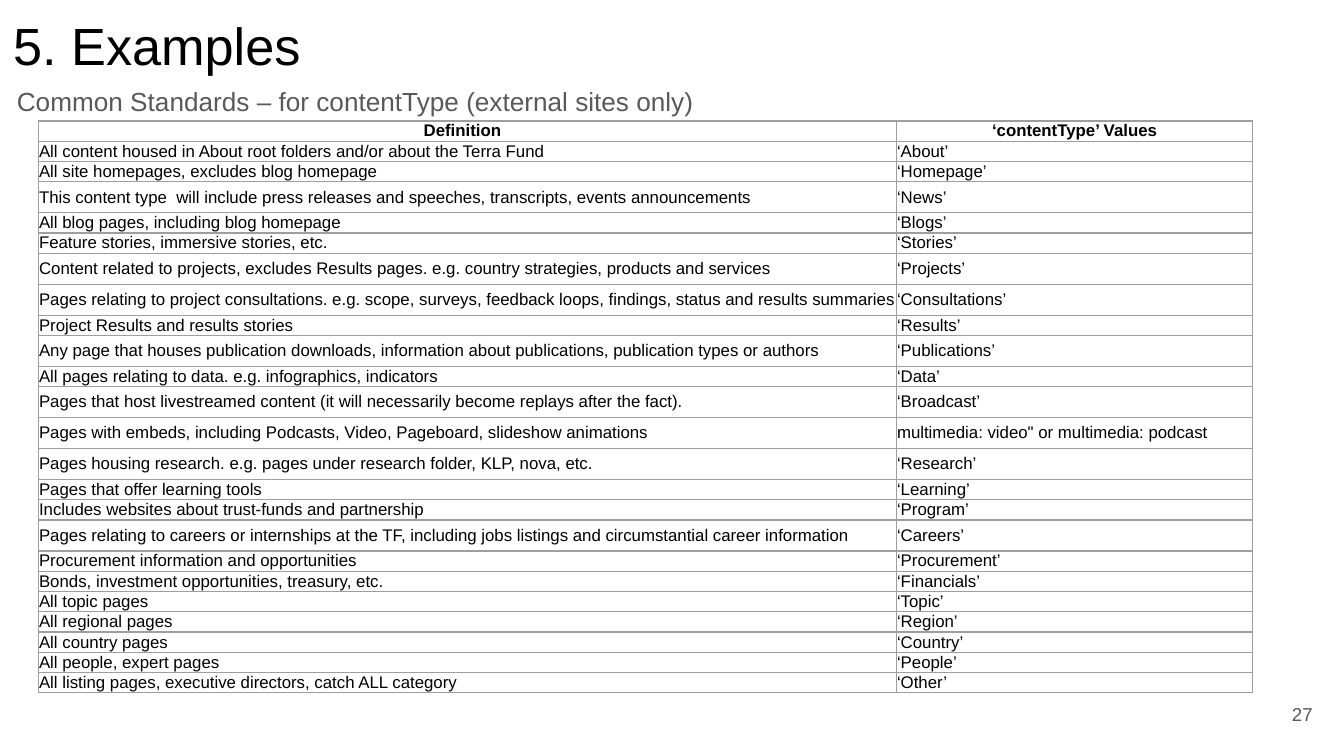
import pptx
import pptx.dml.color
import pptx.enum.text
import pptx.oxml
import pptx.oxml.ns
import pptx.util

PP_ALIGN = pptx.enum.text.PP_ALIGN
ANCHOR = pptx.enum.text.MSO_ANCHOR
COLORS = {"ink": "000000", "muted": "595959", "rule": "9E9E9E"}

# Definition, value, whether the row is tall
ROWS = [
    ("Definition", "‘contentType’ Values", False),
    ("All content housed in About root folders and/or about the Terra Fund", "‘About’", False),
    ("All site homepages, excludes blog homepage", "‘Homepage’", False),
    ("This content type  will include press releases and speeches, transcripts, events announcements",
     "‘News’", True),
    ("All blog pages, including blog homepage", "‘Blogs’", False),
    ("Feature stories, immersive stories, etc.", "‘Stories’", False),
    ("Content related to projects, excludes Results pages. e.g. country strategies, products and services",
     "‘Projects’", True),
    ("Pages relating to project consultations. e.g. scope, surveys, feedback loops, findings, "
     "status and results summaries", "‘Consultations’", True),
    ("Project Results and results stories", "‘Results’", False),
    ("Any page that houses publication downloads, information about publications, "
     "publication types or authors", "‘Publications’", True),
    ("All pages relating to data. e.g. infographics, indicators", "‘Data’", False),
    ("Pages that host livestreamed content (it will necessarily become replays after the fact).",
     "‘Broadcast’", True),
    ("Pages with embeds, including Podcasts, Video, Pageboard, slideshow animations",
     'multimedia: video" or multimedia: podcast', True),
    ("Pages housing research. e.g. pages under research folder, KLP, nova, etc.", "‘Research’", True),
    ("Pages that offer learning tools", "‘Learning’", False),
    ("Includes websites about trust-funds and partnership", "‘Program’", False),
    ("Pages relating to careers or internships at the TF, including jobs listings and "
     "circumstantial career information", "‘Careers’", True),
    ("Procurement information and opportunities", "‘Procurement’", False),
    ("Bonds, investment opportunities, treasury, etc.", "‘Financials’", False),
    ("All topic pages", "‘Topic’", False),
    ("All regional pages", "‘Region’", False),
    ("All country pages", "‘Country’", False),
    ("All people, expert pages", "‘People’", False),
    ("All listing pages, executive directors, catch ALL category", "‘Other’", False),
]


def write(tf, text, size=9, color="ink", bold=False, align=PP_ALIGN.LEFT, spacing=None):
    p = tf.paragraphs[0]
    p.alignment = align
    p.line_spacing = spacing
    r = p.add_run()
    r.text = text
    r.font.name = "Arial"
    r.font.size = pptx.util.Pt(size)
    r.font.bold = bold
    r.font.color.rgb = pptx.dml.color.RGBColor.from_string(COLORS[color])


def add_borders(cell):
    tcPr = cell._tc.get_or_add_tcPr()
    for i, side in enumerate(("lnL", "lnR", "lnT", "lnB")):
        tcPr.insert(i, pptx.oxml.parse_xml(
            f'<a:{side} {pptx.oxml.ns.nsdecls("a")} w="{pptx.util.Pt(0.75)}"><a:solidFill>'
            f'<a:srgbClr val="{COLORS["rule"]}"/></a:solidFill></a:{side}>'))


prs = pptx.Presentation()
prs.slide_width = pptx.util.Inches(10)
prs.slide_height = prs.slide_width * 9 // 16
s = prs.slides.add_slide(prs.slide_layouts[6])

# A grid of 100 columns by 100 rows
col = prs.slide_width / 100
row = prs.slide_height / 100

# Title, subtitle and page number
for text, (x, y, w, h), indent, anchor, style in [
    ("5. Examples", (0, 0, 93.2, 11.2), 0, ANCHOR.TOP, dict(size=28)),
    ("Common Standards – for contentType (external sites only)", (-1, 8.9, 57.1, 9.4), 1.25, ANCHOR.TOP,
     dict(size=14, color="muted", spacing=1.15)),
    ("27", (92.65, 90.7, 6, 7.6), 0, ANCHOR.MIDDLE, dict(size=10, color="muted", align=PP_ALIGN.RIGHT)),
]:
    sp = s.shapes.add_textbox(int(x * col), int(y * row), int(w * col), int(h * row))
    tf = sp.text_frame
    tf.word_wrap = True
    tf.vertical_anchor = anchor
    tf.margin_left = int((1 + indent) * col)
    tf.margin_right = tf.margin_top = tf.margin_bottom = int(col)
    write(tf, text, **style)

# Table of content types
widths = [63.84, 26.5]
heights = [4.1 if tall else 2.1 for _, _, tall in ROWS]
table = s.shapes.add_table(len(ROWS), len(widths), int(2.86 * col), int(16 * row),
                           int(sum(widths) * col), int(sum(heights) * row)).table
table.horz_banding = False
table.first_row = False
for column, width in zip(table.columns, widths):
    column.width = int(width * col)
for i, (definition, value, _) in enumerate(ROWS):
    table.rows[i].height = int(heights[i] * row)
    header = i == 0
    for j, text in enumerate((definition, value)):
        cell = table.cell(i, j)
        cell.fill.background()
        cell.vertical_anchor = ANCHOR.MIDDLE
        cell.margin_left = cell.margin_right = int(0.05 * col)
        cell.margin_top = cell.margin_bottom = 0
        add_borders(cell)
        write(cell.text_frame, text, bold=header, align=PP_ALIGN.CENTER if header else PP_ALIGN.LEFT)
table.cell(0, 0).margin_right = int(0.8 * col)

prs.save("out.pptx")
